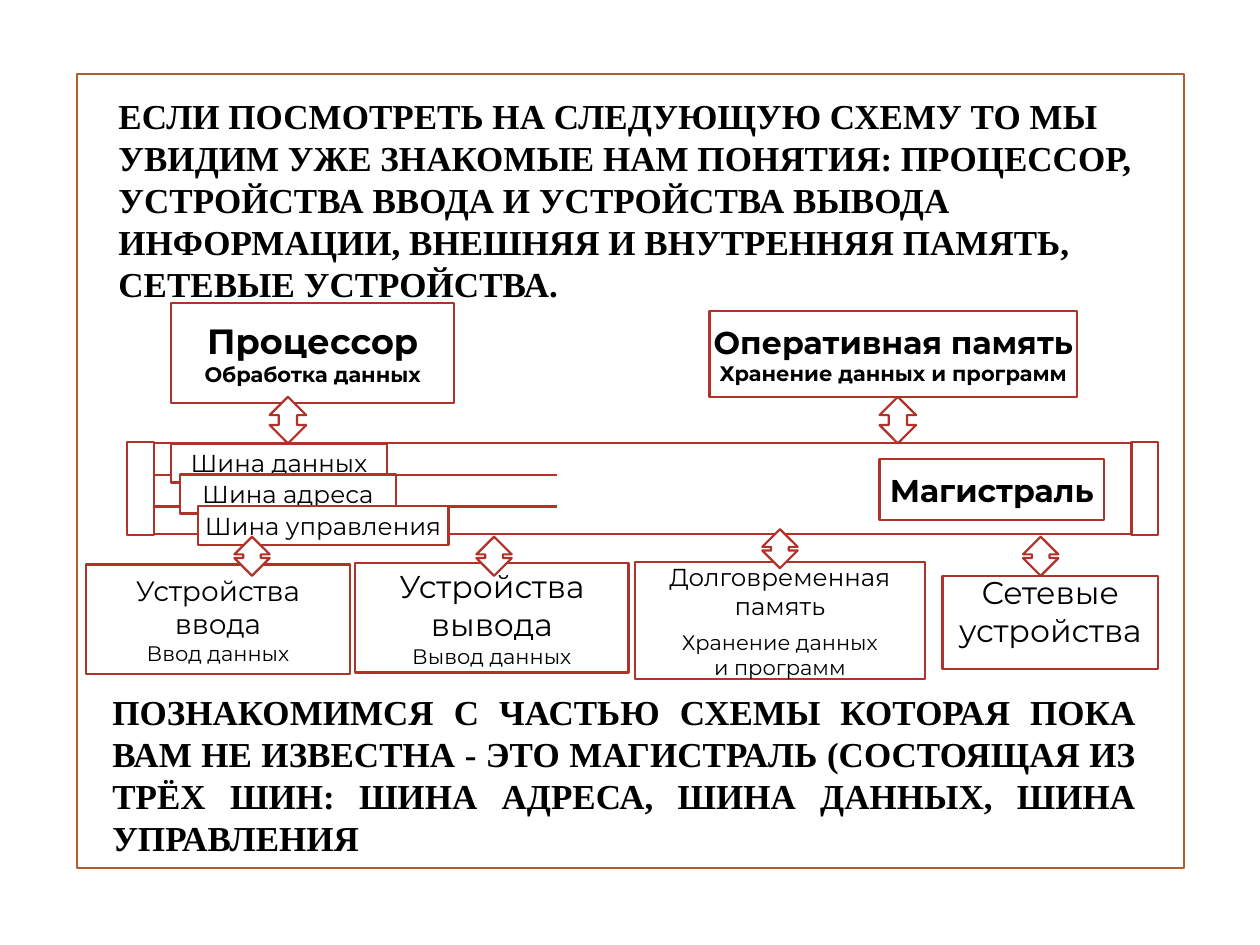
from lxml.etree import SubElement
from pptx import Presentation
from pptx.dml.color import RGBColor
from pptx.enum.shapes import MSO_CONNECTOR, MSO_SHAPE
from pptx.enum.text import MSO_ANCHOR, MSO_AUTO_SIZE, PP_ALIGN
from pptx.oxml.ns import qn
from pptx.util import Pt

COLORS = {
    "frame": "B15E28",
    "line": "B13228",
    "fill": "FFFFFF",
    "text": "000000",
}

deck = Presentation()
deck.slide_width, deck.slide_height = Pt(720), Pt(540)
page = deck.slides.add_slide(deck.slide_layouts[6])


def add_shape(kind, left, top, width, height, line="line"):
    shape = page.shapes.add_shape(kind, Pt(left), Pt(top), Pt(width), Pt(height))
    shape.shadow.inherit = False
    shape.fill.solid()
    shape.fill.fore_color.rgb = RGBColor.from_string(COLORS["fill"])
    shape.line.color.rgb = RGBColor.from_string(COLORS[line])
    shape.line.width = Pt(1.25)
    return shape


def write(shape, lines, font="Montserrat", bold=False, align=PP_ALIGN.CENTER,
          anchor=MSO_ANCHOR.MIDDLE, wrap=False, inset=0, bottom=0):
    """Write one paragraph per (text, size, space before) line."""
    frame = shape.text_frame
    frame.word_wrap = wrap
    frame.vertical_anchor = anchor
    frame.margin_left = frame.margin_right = Pt(inset)
    frame.margin_top, frame.margin_bottom = Pt(inset / 2), Pt(inset / 2 + bottom)
    for number, (text, size, before) in enumerate(lines):
        para = frame.paragraphs[0] if number == 0 else frame.add_paragraph()
        para.alignment = align
        para.space_before = Pt(before)
        span = para.add_run()
        span.text = text
        span.font.name = font
        span.font.size = Pt(size)
        span.font.bold = bold
        span.font.color.rgb = RGBColor.from_string(COLORS["text"])


# Page frame
add_shape(MSO_SHAPE.RECTANGLE, 43.9, 42.5, 632.9, 453.6, line="frame")

# Paragraphs above and below the diagram
intro = ("ЕСЛИ ПОСМОТРЕТЬ НА СЛЕДУЮЩУЮ СХЕМУ ТО МЫ УВИДИМ УЖЕ ЗНАКОМЫЕ НАМ ПОНЯТИЯ: "
         "ПРОЦЕССОР, УСТРОЙСТВА ВВОДА И УСТРОЙСТВА ВЫВОДА ИНФОРМАЦИИ, ВНЕШНЯЯ И "
         "ВНУТРЕННЯЯ ПАМЯТЬ, СЕТЕВЫЕ УСТРОЙСТВА.")
outro = ("ПОЗНАКОМИМСЯ С ЧАСТЬЮ СХЕМЫ КОТОРАЯ ПОКА ВАМ НЕ ИЗВЕСТНА - ЭТО МАГИСТРАЛЬ "
         "(СОСТОЯЩАЯ ИЗ ТРЁХ ШИН: ШИНА АДРЕСА, ШИНА ДАННЫХ, ШИНА УПРАВЛЕНИЯ")
for text, left, top, width, height, align, anchor in [
    (outro, 57.1, 390.4, 599, 104.4, PP_ALIGN.JUSTIFY, MSO_ANCHOR.MIDDLE),
    (intro, 60.6, 50.4, 607, 128.2, PP_ALIGN.LEFT, MSO_ANCHOR.TOP),
]:
    box = page.shapes.add_textbox(Pt(left), Pt(top), Pt(width), Pt(height))
    write(box, [(text, 20, 0)], font="Times New Roman", bold=True, align=align,
          anchor=anchor, wrap=True, inset=7.2)
    box.text_frame.auto_size = MSO_AUTO_SIZE.SHAPE_TO_FIT_TEXT

# Backbone with its two end caps
add_shape(MSO_SHAPE.RECTANGLE, 77.8, 253.4, 573.8, 52)
for left in (72.7, 646.6):
    add_shape(MSO_SHAPE.RECTANGLE, left, 252.7, 15.1, 53.3)
backbone = add_shape(MSO_SHAPE.RECTANGLE, 502.6, 262.1, 128.2, 35.3)
write(backbone, [("Магистраль", 18, 0)], bold=True)

# Lines between the buses
for y in (271.4, 289.4):
    divider = page.shapes.add_connector(
        MSO_CONNECTOR.STRAIGHT, Pt(87.8), Pt(y), Pt(318.2), Pt(y))
    divider.line.color.rgb = RGBColor.from_string(COLORS["line"])
    divider.line.width = Pt(1.25)
    SubElement(divider.element.spPr, qn("a:effectLst"))

# Buses
for row, (name, left, width) in enumerate([
    ("Шина данных", 97.9, 123.1),
    ("Шина адреса", 103, 123.1),
    ("Шина управления", 113, 143.3),
]):
    bus = add_shape(MSO_SHAPE.RECTANGLE, left, 253.4 + 17.8 * row, width, 22.3)
    write(bus, [(name, 14, 0)])

# Devices: left, top, width, height, bold, extra bottom inset, lines
devices = [
    (97.9, 173.2, 161.6, 56.9, True, 0,
     [("Процессор", 20, 0), ("Обработка данных", 12, 0)]),
    (405.4, 177.8, 210.2, 49, True, 0,
     [("Оперативная память", 18, 0), ("Хранение данных и программ", 12, 0)]),
    (49, 322.6, 151.2, 62.6, False, 0,
     [("Устройства", 16, 0), ("ввода", 16, 0), ("Ввод данных", 12, 0)]),
    (203, 321.8, 156.2, 62.6, False, 0,
     [("Устройства", 18, 0), ("вывода", 18, 0), ("Вывод данных", 12, 0)]),
    (362.9, 321.1, 165.6, 67, False, 0,
     [("Долговременная", 14, 0), ("память", 14, 0),
      ("Хранение данных", 12, 5), ("и программ", 12, 0)]),
    (538.6, 329, 123.1, 53.3, False, 13,
     [("Сетевые", 18, 0), ("устройства", 18, 0)]),
]
for left, top, width, height, bold, bottom, lines in devices:
    device = add_shape(MSO_SHAPE.RECTANGLE, left, top, width, height)
    write(device, lines, bold=bold, bottom=bottom)

# Two-way arrows between the devices and the backbone
upper = [(left, 226.8, 20.9, 26.6, 0.3) for left in (154.1, 502.6)]
lower = [(left, top, 20.2, 22.3, 0.25) for left, top in
         [(133.9, 306.7), (272.2, 306.7), (435.6, 302.4), (584.6, 306.7)]]
for left, top, width, height, head in upper + lower:
    arrow = add_shape(MSO_SHAPE.UP_DOWN_ARROW, left, top, width, height)
    arrow.adjustments[0] = head
    arrow.adjustments[1] = 0.5

deck.save("out.pptx")
